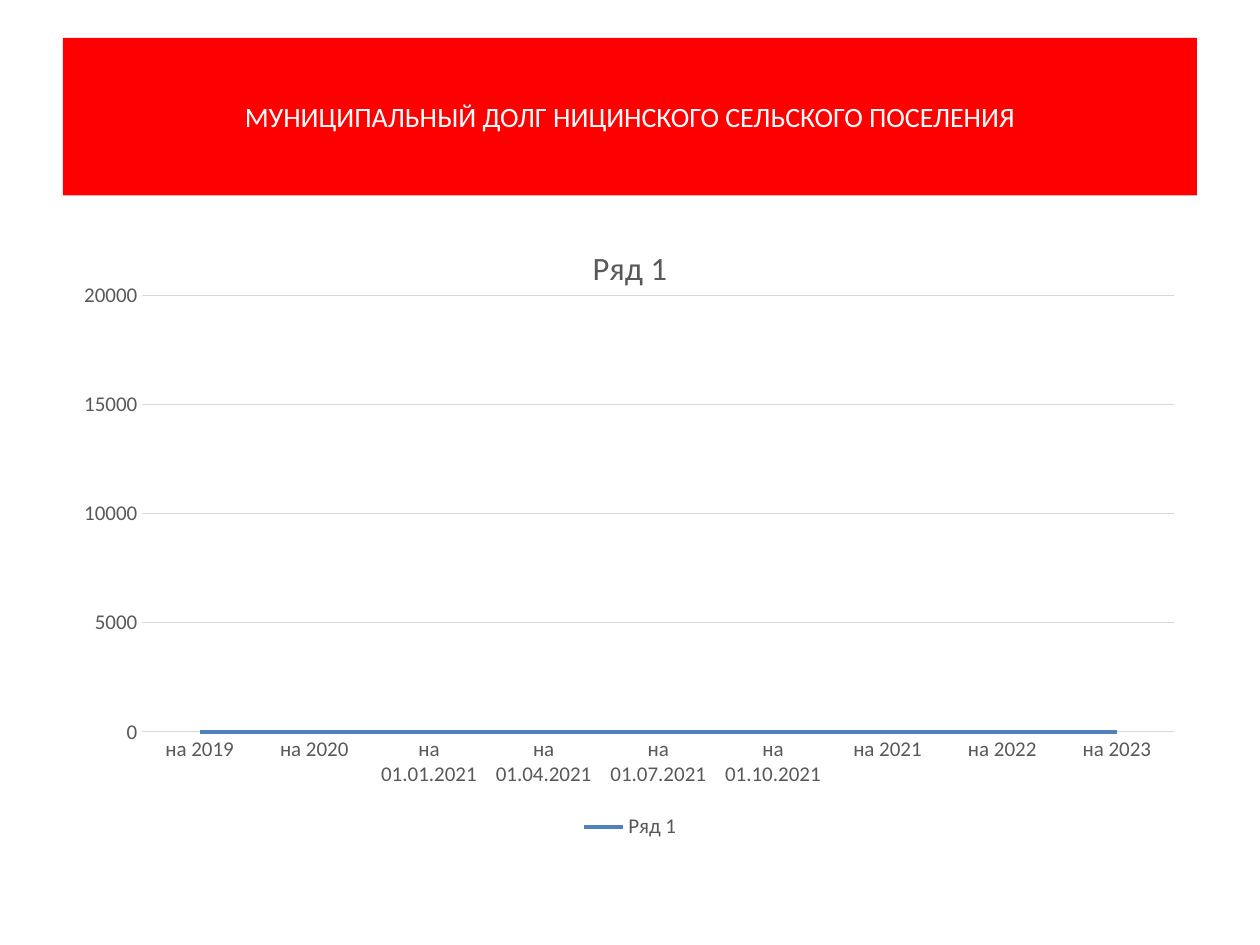
from lxml import etree
from pptx import Presentation
from pptx.chart.data import CategoryChartData
from pptx.dml.color import RGBColor
from pptx.enum.chart import XL_CHART_TYPE, XL_LEGEND_POSITION, XL_MARKER_STYLE, XL_TICK_MARK
from pptx.enum.shapes import MSO_SHAPE
from pptx.enum.text import MSO_ANCHOR, PP_ALIGN
from pptx.oxml.ns import qn
from pptx.util import Inches, Pt

RED = RGBColor(0xFF, 0x00, 0x00)
WHITE = RGBColor(0xFF, 0xFF, 0xFF)
BLUE = RGBColor(0x4F, 0x81, 0xBD)
DARK_GRAY = RGBColor(0x59, 0x59, 0x59)
LIGHT_GRAY = RGBColor(0xD9, 0xD9, 0xD9)
FONT = "Calibri"
SERIES_NAME = "Ряд 1"
PERIODS = [
    "на 2019", "на 2020", "на 01.01.2021", "на 01.04.2021", "на 01.07.2021",
    "на 01.10.2021", "на 2021", "на 2022", "на 2023",
]
DEBT = [0] * len(PERIODS)


def style_font(font, size, color):
    """Set the typeface, size and colour of a font."""
    font.name = FONT
    font.size = Pt(size)
    font.bold = False
    font.color.rgb = color


def style_line(line, color, width):
    """Set the colour and width of a line."""
    line.color.rgb = color
    line.width = Pt(width)


def set_plot_layout(chart, x, y, w, h):
    """Fix the inner plot area as fractions of the chart."""
    plot_area = chart._chartSpace.chart.plotArea
    for old_layout in plot_area.findall(qn("c:layout")):
        plot_area.remove(old_layout)
    layout = etree.Element(qn("c:layout"))
    manual = etree.SubElement(layout, qn("c:manualLayout"))
    settings = {
        "layoutTarget": "inner", "xMode": "edge", "yMode": "edge",
        "x": x, "y": y, "w": w, "h": h,
    }
    for name, value in settings.items():
        etree.SubElement(manual, qn(f"c:{name}")).set("val", str(value))
    plot_area.insert(0, layout)


def add_title_banner(slide, left, top, width, height):
    """Place the red heading banner in the given box."""
    banner = slide.shapes.add_shape(MSO_SHAPE.RECTANGLE, left, top, width, height)
    banner.shadow.inherit = False
    banner.fill.solid()
    banner.fill.fore_color.rgb = RED
    banner.line.fill.background()
    text_frame = banner.text_frame
    text_frame.word_wrap = True
    text_frame.vertical_anchor = MSO_ANCHOR.MIDDLE
    text_frame.text = "МУНИЦИПАЛЬНЫЙ ДОЛГ НИЦИНСКОГО СЕЛЬСКОГО ПОСЕЛЕНИЯ"
    paragraph = text_frame.paragraphs[0]
    paragraph.alignment = PP_ALIGN.CENTER
    style_font(paragraph.runs[0].font, 16, WHITE)


def add_debt_chart(slide, left, top, width, height):
    """Place the municipal debt line chart in the given box."""
    chart_data = CategoryChartData()
    chart_data.categories = PERIODS
    chart_data.add_series(SERIES_NAME, DEBT)
    chart = slide.shapes.add_chart(
        XL_CHART_TYPE.LINE, left, top, width, height, chart_data
    ).chart
    style_font(chart.font, 12, DARK_GRAY)

    chart.has_title = True
    title_frame = chart.chart_title.text_frame
    title_frame.text = SERIES_NAME
    style_font(title_frame.paragraphs[0].runs[0].font, 18.6, DARK_GRAY)
    chart.chart_title.include_in_layout = False

    chart.has_legend = True
    chart.legend.position = XL_LEGEND_POSITION.BOTTOM
    chart.legend.include_in_layout = False
    style_font(chart.legend.font, 12, DARK_GRAY)

    for axis in (chart.category_axis, chart.value_axis):
        axis.major_tick_mark = XL_TICK_MARK.NONE
        axis.minor_tick_mark = XL_TICK_MARK.NONE
        style_font(axis.tick_labels.font, 12, DARK_GRAY)
    style_line(chart.category_axis.format.line, LIGHT_GRAY, 0.75)

    value_axis = chart.value_axis
    value_axis.minimum_scale = 0
    value_axis.maximum_scale = 20000
    value_axis.major_unit = 5000
    value_axis.format.line.fill.background()
    value_axis.has_major_gridlines = True
    style_line(value_axis.major_gridlines.format.line, LIGHT_GRAY, 0.75)

    plot = chart.plots[0]
    plot.vary_by_categories = False
    series = plot.series[0]
    series.smooth = False
    series.marker.style = XL_MARKER_STYLE.NONE
    style_line(series.format.line, BLUE, 2.25)
    set_plot_layout(chart, 0.07, 0.12, 0.91, 0.7)


def main():
    """Build the municipal debt slide."""
    presentation = Presentation()
    presentation.slide_width = Inches(10)
    presentation.slide_height = Inches(7.5)
    slide = presentation.slides.add_slide(presentation.slide_layouts[6])
    add_title_banner(slide, Inches(0.5), Inches(0.3), Inches(9), Inches(1.25))
    add_debt_chart(slide, Inches(0.5), Inches(1.75), Inches(9), Inches(4.95))
    presentation.save("out.pptx")


if __name__ == "__main__":
    main()
